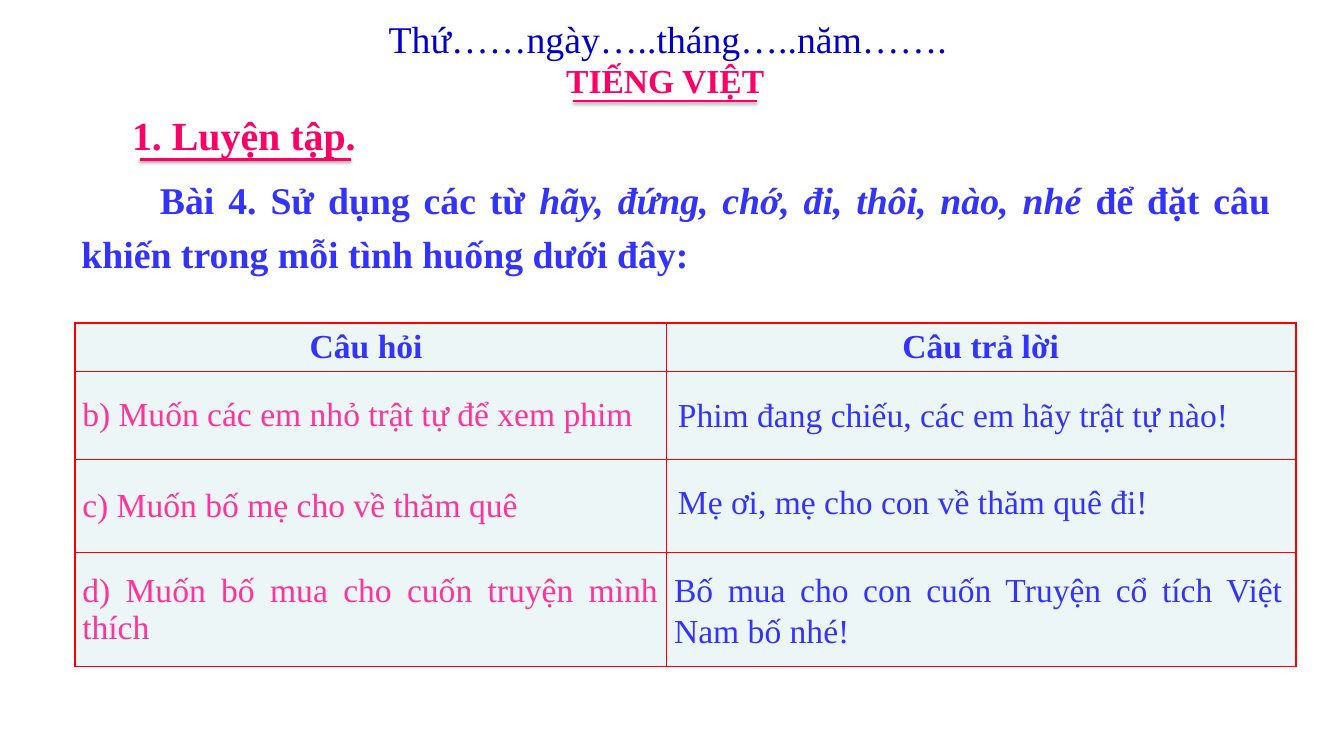
from lxml import etree
from pptx import Presentation
from pptx.enum import shapes, text
from pptx.dml.color import RGBColor
from pptx.oxml import ns
from pptx.util import Pt

PX = 9144  # EMU in one px, 100 px to the inch
FONT = "Times New Roman"
COLORS = {
    "date": "0000CC",
    "heading": "FF0066",
    "body": "3333FF",
    "question": "FF3399",
    "border": "FF0000",
    "cell": "EDF6F7",
    "shadow": "000000",
}
LEFT, CENTER, JUSTIFY = text.PP_ALIGN.LEFT, text.PP_ALIGN.CENTER, text.PP_ALIGN.JUSTIFY


def px(*lengths):
    return [length * PX for length in lengths]


def rgb(name):
    return RGBColor.from_string(COLORS[name])


def add_child(parent, tag, **attributes):
    return etree.SubElement(parent, ns.qn(tag), attributes)


def style_span(span, size, color, bold=False, italic=False):
    font = span.font
    font.name, font.size, font.bold, font.italic = FONT, Pt(size), bold, italic
    font.color.rgb = rgb(color)


def add_text(page, place, spans, size, color, bold=False, align=LEFT, wrap=True):
    """Add a text box; spans is a list of (wording, italic) pairs."""
    box = page.shapes.add_textbox(*px(*place))
    frame = box.text_frame
    frame.word_wrap = wrap
    frame.auto_size = text.MSO_AUTO_SIZE.SHAPE_TO_FIT_TEXT
    para = frame.paragraphs[0]
    para.alignment = align
    for wording, italic in spans:
        span = para.add_run()
        span.text = wording
        style_span(span, size, color, bold, italic)
    return para


def add_underline(page, left, right, y, width, opacity):
    line = page.shapes.add_connector(
        shapes.MSO_CONNECTOR.STRAIGHT, *px(left, y, right, y))
    line.line.color.rgb = rgb("heading")
    line.line.width = Pt(width)
    # Soft shadow straight below the line
    effects = add_child(line._element.spPr, "a:effectLst")
    shadow = add_child(effects, "a:outerShdw", blurRad=str(Pt(3.1)),
                       dist=str(Pt(1.7)), dir="5400000", rotWithShape="0")
    shade = add_child(shadow, "a:srgbClr", val=COLORS["shadow"])
    add_child(shade, "a:alpha", val=str(opacity * 1000))


def set_borders(cell, widths):
    """Draw the cell borders; widths are points for left, right, top, bottom."""
    properties = cell._tc.get_or_add_tcPr()
    for index, (side, width) in enumerate(zip("LRTB", widths)):
        border = etree.Element(ns.qn("a:ln" + side), w=str(Pt(width)))
        fill = add_child(border, "a:solidFill")
        add_child(fill, "a:srgbClr", val=COLORS["border"])
        properties.insert(index, border)


def add_question_table(page, place, columns, rows, questions):
    table = page.shapes.add_table(len(rows), len(columns), *px(*place)).table
    table.horz_banding = False
    for column, width in zip(table.columns, px(*columns)):
        column.width = width
    for row, height in zip(table.rows, px(*rows)):
        row.height = height

    thin, thick = 1, 2.25
    for r in range(len(rows)):
        for c in range(len(columns)):
            cell = table.cell(r, c)
            cell.fill.solid()
            cell.fill.fore_color.rgb = rgb("cell")
            cell.vertical_anchor = text.MSO_ANCHOR.MIDDLE
            set_borders(cell, (thin if c else thick, thick if c else thin,
                               thin if r else thick, thin))

    # Header row, then the question column
    entries = [(0, 0, "Câu hỏi ", CENTER), (0, 1, "Câu trả lời", CENTER)]
    entries += [(r, 0, wording, align)
                for r, (wording, align) in enumerate(questions, 1)]
    for r, c, wording, align in entries:
        para = table.cell(r, c).text_frame.paragraphs[0]
        para.text = wording
        para.alignment = align
        header = r == 0
        style_span(para.runs[0], 32, "body" if header else "question", header)


def main():
    deck = Presentation()
    deck.slide_width, deck.slide_height = px(1780, 1000)
    page = deck.slides.add_slide(deck.slide_layouts[6])

    # Date and subject
    add_text(page, (505, 16, 767, 71), [("Thứ……ngày…..tháng…..năm…….", False)],
             36, "date", wrap=False)
    add_text(page, (740, 75, 285, 64), [("TIẾNG VIỆT", False)],
             32, "heading", bold=True, wrap=False)
    add_underline(page, 759, 1003, 134, 2, 38)

    # Section heading
    add_text(page, (165, 142, 458, 74), [("1. Luyện tập.", False)],
             38, "heading", bold=True)
    add_underline(page, 185, 465, 211, 3, 35)

    # Task
    task = add_text(page, (98, 217, 1594, 156), [
        ("Bài 4. Sử dụng các từ ", False),
        ("hãy, đứng, chớ, đi, thôi, nào, nhé ", True),
        ("để đặt câu khiến trong mỗi tình huống dưới đây:", False),
    ], 36, "body", bold=True, align=JUSTIFY)
    task.line_spacing = 1.2
    task._p.get_or_add_pPr().set("indent", str(104 * PX))

    # Questions
    add_question_table(
        page, (99, 428, 1617, 455), (783, 834), (63, 117, 123, 152), [
            ("b) Muốn các em nhỏ trật tự để xem phim", LEFT),
            ("c) Muốn bố mẹ cho về thăm quê", LEFT),
            ("d) Muốn bố mua cho cuốn truyện mình thích", JUSTIFY),
        ])

    # Answers, laid over the right column
    answers = [
        ((888, 517, 800, 64), "Phim đang chiếu, các em hãy trật tự nào!", LEFT),
        ((888, 632, 652, 64), "Mẹ ơi, mẹ cho con về thăm quê đi!", LEFT),
        ((883, 749, 826, 118),
         "Bố mua cho con cuốn Truyện cổ tích Việt Nam bố nhé!", JUSTIFY),
    ]
    for place, wording, align in answers:
        add_text(page, place, [(wording, False)], 32, "body", align=align)

    deck.save("out.pptx")


if __name__ == "__main__":
    main()
